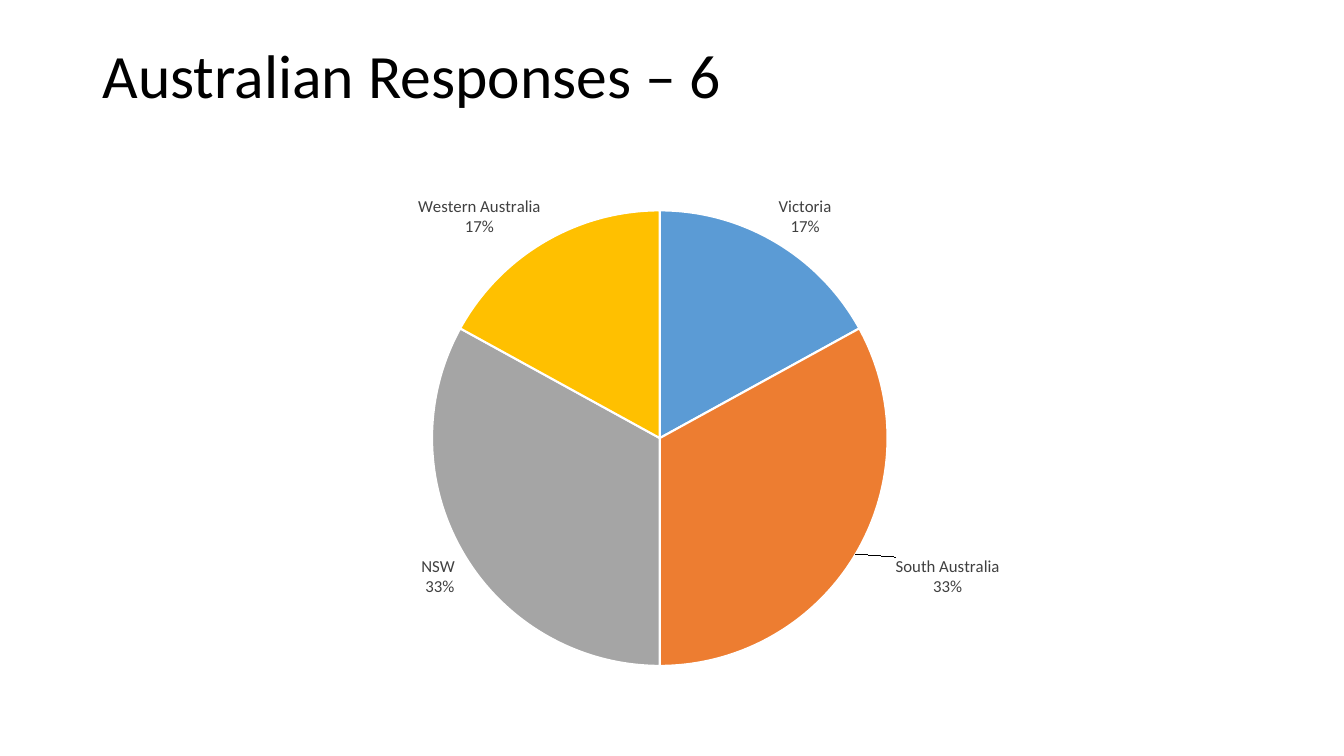
from lxml import etree
from pptx import Presentation
from pptx.chart.data import CategoryChartData
from pptx.dml.color import RGBColor
from pptx.enum.chart import XL_CHART_TYPE as ChartType, XL_LABEL_POSITION as LabelPosition
from pptx.enum.text import MSO_ANCHOR as Anchor, PP_ALIGN as Align
from pptx.oxml.ns import qn
from pptx.util import Cm, Pt

STATES = [
    ("Victoria", 17, "5B9BD5"),
    ("South Australia", 33, "ED7D31"),
    ("NSW ", 33, "A5A5A5"),
    ("Western Australia", 17, "FFC000"),
]


def color(hex_code):
    return RGBColor.from_string(hex_code)


def format_font(font, name, size, hex_code):
    font.name = name
    font.size = Pt(size)
    font.bold = False
    font.color.rgb = color(hex_code)


def write_text(frame, text, *, font, size, hex_code, align=Align.LEFT, line_spacing=0.9):
    paragraph = frame.paragraphs[0]
    paragraph.alignment = align
    paragraph.line_spacing = line_spacing
    run = paragraph.add_run()
    run.text = text
    format_font(run.font, font, size, hex_code)


def make_layout(**values):
    """Return a chart layout element with the given manual settings."""
    layout = etree.Element(qn("c:layout"))
    manual = etree.SubElement(layout, qn("c:manualLayout"))
    for tag, value in values.items():
        etree.SubElement(manual, qn(f"c:{tag}")).set("val", str(value))
    return layout


def show_name_and_percent(element):
    for tag, shown in (("showVal", 0), ("showCatName", 1), ("showPercent", 1)):
        element.find(qn(f"c:{tag}")).set("val", str(shown))
    separator = etree.Element(qn("c:separator"))
    separator.text = "\n"
    bubble_size = element.find(qn("c:showBubbleSize"))
    if bubble_size is None:
        bubble_size = element.find(qn("c:showPercent"))
    bubble_size.addnext(separator)


class SlideBuilder:
    font = "Calibri"
    title_color = "000000"
    label_color = "404040"
    border_color = "FFFFFF"

    def __init__(self, presentation):
        self.slide = presentation.slides.add_slide(presentation.slide_layouts[5])

    def add_title(self, text, left, top, width, height):
        title = self.slide.shapes.title
        title.left, title.top, title.width, title.height = map(Cm, (left, top, width, height))
        title.text_frame.vertical_anchor = Anchor.TOP
        title.text_frame.word_wrap = True
        write_text(title.text_frame, text, font=self.font, size=44, hex_code=self.title_color)

    def add_pie(self, slices, left, top, width, height):
        data = CategoryChartData()
        data.categories = [name for name, _, _ in slices]
        data.add_series("Series 1", [value for _, value, _ in slices])
        frame = self.slide.shapes.add_chart(
            ChartType.PIE, Cm(left), Cm(top), Cm(width), Cm(height), data)
        chart = frame.chart
        chart.has_title = False
        chart.has_legend = False
        format_font(chart.font, self.font, 10, self.title_color)
        chart.plots[0].vary_by_categories = True
        series = chart.plots[0].series[0]
        for index, (_, _, fill_color) in enumerate(slices):
            slice_format = series.points[index].format
            slice_format.fill.solid()
            slice_format.fill.fore_color.rgb = color(fill_color)
            slice_format.line.color.rgb = color(self.border_color)
            slice_format.line.width = Pt(1.5)
        self.set_plot_area(chart, x=0.293, y=0.087, w=0.393, h=0.885)
        self.label_slices(chart, series)
        return chart, series

    def set_plot_area(self, chart, **box):
        plot_area = chart.element.find(".//" + qn("c:plotArea")) if hasattr(chart, "element") \
            else chart._chartSpace.find(".//" + qn("c:plotArea"))
        for layout in plot_area.findall(qn("c:layout")):
            plot_area.remove(layout)
        plot_area.insert(0, make_layout(layoutTarget="inner", xMode="edge", yMode="edge", **box))

    def label_slices(self, chart, series):
        labels = series.data_labels
        labels.position = LabelPosition.OUTSIDE_END
        format_font(labels.font, self.font, 12, self.label_color)
        show_name_and_percent(labels._element)

    def shift_label(self, series, index, x, y):
        """Move one slice label by fractions of the chart size."""
        label = series.points[index].data_label
        label.position = LabelPosition.OUTSIDE_END
        format_font(label.font, self.font, 12, self.label_color)
        element = series.data_labels._element.find(qn("c:dLbl"))
        show_name_and_percent(element)
        element.find(qn("c:idx")).addnext(make_layout(x=x, y=y))


def main():
    presentation = Presentation()
    presentation.slide_width, presentation.slide_height = Cm(33.87), Cm(19.05)
    builder = SlideBuilder(presentation)
    builder.add_title("Australian Responses – 6", 2.33, 1.01, 29.21, 3.68)
    _, series = builder.add_pie(STATES, 2.33, 4.17, 29.21, 12.98)
    builder.shift_label(series, STATES.index(STATES[1]), x=0.03, y=0)
    presentation.save("out.pptx")


if __name__ == "__main__":
    main()
